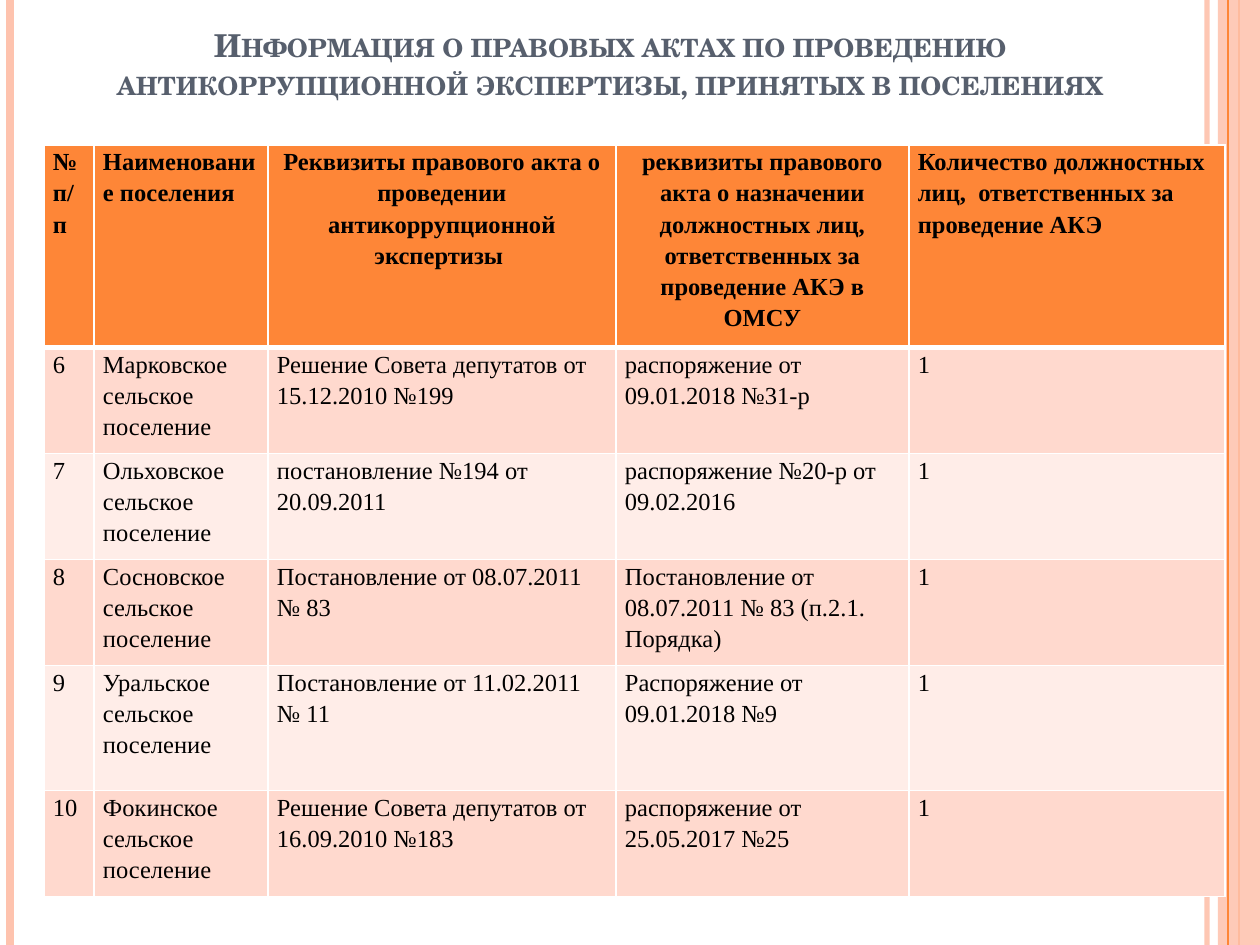
from dataclasses import dataclass

from pptx import Presentation, util as u
from pptx.dml.color import RGBColor
from pptx.enum import shapes, text
from pptx.oxml.ns import qn
from lxml import etree

PX = 914400 / 126
WIDTH, HEIGHT = 1260, 945


@dataclass(frozen=True)
class Theme:
    accent: str = "FE8637"
    stripe: str = "FEC3AE"
    row_dark: str = "FFD9CE"
    row_light: str = "FFEDE8"
    border: str = "FFFFFF"
    title: str = "575F6D"
    ink: str = "000000"
    title_font: str = "TeX Gyre Schola"
    table_font: str = "Times New Roman"
    title_size: int = 18
    table_size: int = 14


THEME = Theme()
LEFT, CENTER = text.PP_ALIGN.LEFT, text.PP_ALIGN.CENTER

TITLE = ("Информация о правовых актах по проведению антикоррупционной "
         "экспертизы, принятых в поселениях")
COLUMN_WIDTHS = [50, 174, 348, 293, 316]
ROW_HEIGHTS = [176, 106, 106, 106, 125, 106]
HEADER_ALIGN = [LEFT, LEFT, CENTER, CENTER, LEFT]
HEADER = [
    "№ п/п",
    "Наименование поселения",
    "Реквизиты правового акта о проведении антикоррупционной экспертизы ",
    "реквизиты правового акта о назначении должностных лиц, "
    "ответственных за проведение АКЭ в ОМСУ",
    "Количество должностных лиц,  ответственных за проведение АКЭ",
]
SETTLEMENTS = [
    ("6", "Марковское", "Решение Совета депутатов от 15.12.2010 №199",
     "распоряжение от 09.01.2018 №31-р", "1"),
    ("7", "Ольховское", "постановление №194 от 20.09.2011",
     "распоряжение №20-р от 09.02.2016", "1"),
    ("8", "Сосновское", "Постановление от 08.07.2011 № 83",
     "Постановление от 08.07.2011 № 83 (п.2.1. Порядка)", "1"),
    ("9", "Уральское", "Постановление от 11.02.2011 № 11",
     "Распоряжение от 09.01.2018 №9", "1"),
    ("10", "Фокинское", "Решение Совета депутатов от 16.09.2010 №183",
     "распоряжение от 25.05.2017 №25", "1"),
]


def px(length):
    return u.Emu(round(length * PX))


def set_all(target, values):
    for name, value in values.items():
        setattr(target, name, value)


def set_alpha(fill, percent):
    """Make a solid fill partly transparent."""
    color = fill._xPr.find(qn("a:solidFill"))[0]
    etree.SubElement(color, qn("a:alpha")).set("val", str(percent * 1000))


def write(para, words, color, **font):
    span = para.add_run()
    span.text = words
    set_all(span.font, font)
    span.font.color.rgb = RGBColor.from_string(color)
    return span


def add_vertical_line(page, x, color, points, alpha=100):
    line = page.shapes.add_connector(
        shapes.MSO_CONNECTOR.STRAIGHT, px(x), 0, px(x), px(HEIGHT))
    line.line.width = u.Pt(points)
    line.line.color.rgb = RGBColor.from_string(color)
    if alpha < 100:
        set_alpha(line.line.fill, alpha)
    etree.SubElement(line._element.spPr, qn("a:effectLst"))


def add_side_band(page, left, alpha):
    band = page.shapes.add_shape(
        shapes.MSO_SHAPE.RECTANGLE, px(left), 0, px(WIDTH - left), px(HEIGHT))
    band.shadow.inherit = False
    band.fill.solid()
    band.fill.fore_color.rgb = RGBColor.from_string(THEME.stripe)
    set_alpha(band.fill, alpha)
    band.line.fill.background()


def add_title(page):
    box = page.shapes.add_textbox(px(39), px(20), px(1142), px(88))
    set_all(box.text_frame, {"word_wrap": True,
                             "vertical_anchor": text.MSO_ANCHOR.BOTTOM})
    para = box.text_frame.paragraphs[0]
    para.alignment = CENTER
    span = write(para, TITLE, THEME.title, name=THEME.title_font,
                 size=u.Pt(THEME.title_size), bold=True)
    span._r.get_or_add_rPr().set("cap", "small")


def set_borders(cell, **points):
    """Draw the cell's sides; widths are given by L, R, T and B."""
    properties = cell._tc.get_or_add_tcPr()
    for side in "LRTB":
        line = etree.SubElement(properties, qn(f"a:ln{side}"))
        line.set("w", str(u.Pt(points.get(side, 1))))
        fill = etree.SubElement(line, qn("a:solidFill"))
        etree.SubElement(fill, qn("a:srgbClr")).set("val", THEME.border)


def fill_cell(cell, words, color, align=LEFT, bold=False, **borders):
    set_all(cell, {"margin_left": px(9), "margin_right": px(9),
                   "margin_top": 0, "margin_bottom": 0})
    set_borders(cell, **borders)
    cell.fill.solid()
    cell.fill.fore_color.rgb = RGBColor.from_string(color)
    para = cell.text_frame.paragraphs[0]
    set_all(para, {"alignment": align, "line_spacing": 1.15})
    write(para, words, THEME.ink, name=THEME.table_font,
          size=u.Pt(THEME.table_size), bold=bold)


def add_acts_table(page):
    table = page.shapes.add_table(
        len(ROW_HEIGHTS), len(COLUMN_WIDTHS), px(44), px(145),
        px(sum(COLUMN_WIDTHS)), px(sum(ROW_HEIGHTS))).table
    for column, width in zip(table.columns, COLUMN_WIDTHS):
        column.width = px(width)
    for row, height in zip(table.rows, ROW_HEIGHTS):
        row.height = px(height)
    for column, (words, align) in enumerate(zip(HEADER, HEADER_ALIGN)):
        fill_cell(table.cell(0, column), words, THEME.accent, align,
                  bold=True, B=3)
    for row, (number, name, *acts) in enumerate(SETTLEMENTS, 1):
        color = THEME.row_dark if row % 2 else THEME.row_light
        values = [number, f"{name} сельское поселение", *acts]
        for column, words in enumerate(values):
            fill_cell(table.cell(row, column), words, color,
                      T=3 if row == 1 else 1)


def main():
    deck = Presentation()
    set_all(deck, {"slide_width": px(WIDTH), "slide_height": px(HEIGHT)})
    page = deck.slides.add_slide(deck.slide_layouts[6])
    add_vertical_line(page, 1207, THEME.stripe, 3, alpha=93)
    add_vertical_line(page, 10, THEME.stripe, 4.5)
    add_vertical_line(page, 1239, THEME.accent, 1.5)
    add_side_band(page, 1218, alpha=87)
    add_vertical_line(page, 1228, THEME.accent, 0.75)
    add_title(page)
    add_acts_table(page)
    deck.save("out.pptx")


if __name__ == "__main__":
    main()
